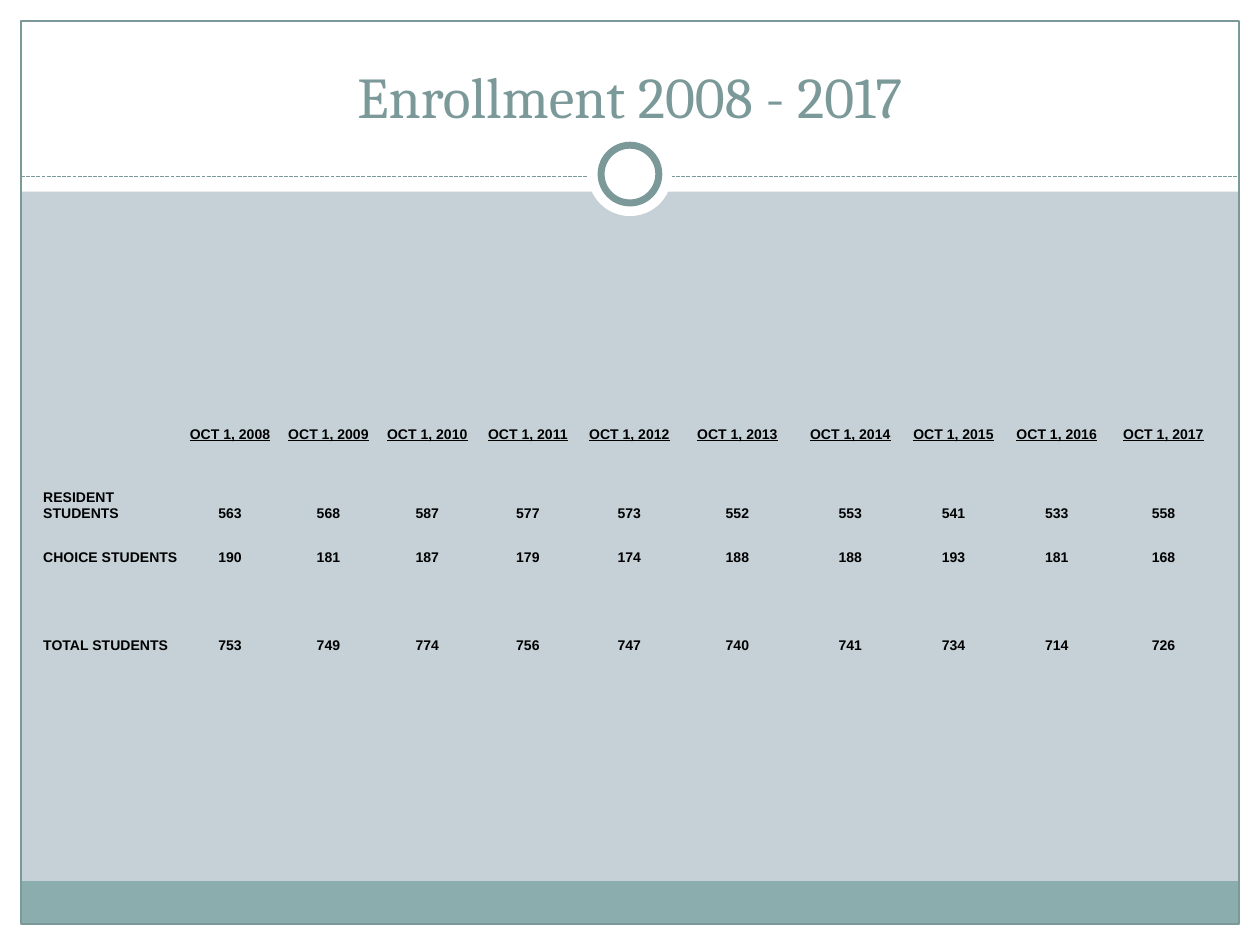
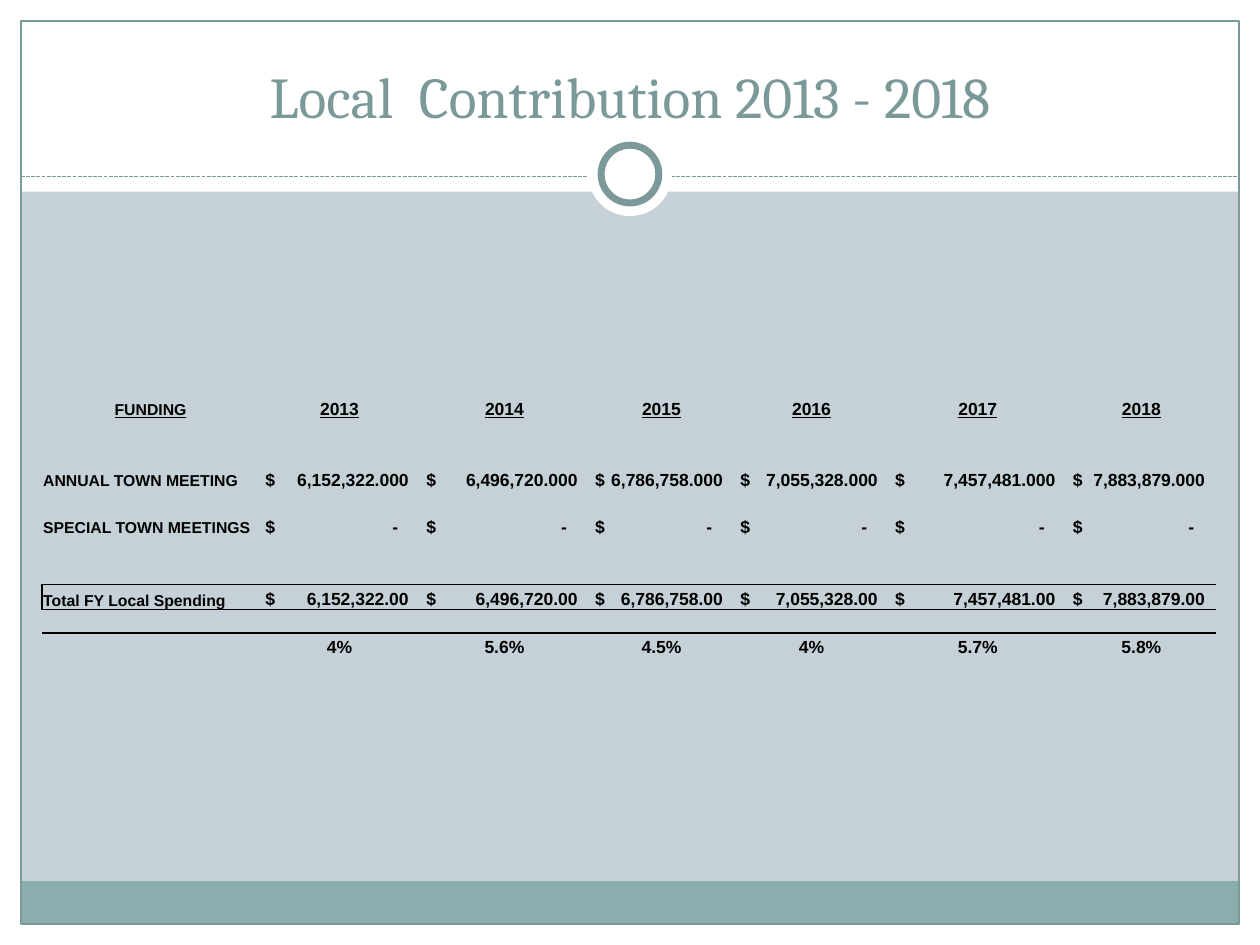
from lxml import etree
from pptx import Presentation
from pptx import util as u
from pptx.dml.color import RGBColor
from pptx.enum import dml, shapes, text
from pptx.oxml import ns

COLORS = {
    "background": "C5D1D7",
    "paper": "FFFFFF",
    "accent": "7C999A",
    "footer": "8CADAE",
    "ink": "000000",
}
WIDTH, HEIGHT, MARGIN = 720, 540, 12
HEADER_HEIGHT = 109.5
NO_STYLE_TABLE = "{2D5ABB26-0587-4C30-8999-92F81FD0307C}"
CELL_INSET, AMOUNT_INSET = 0.7, 3.6
AMOUNT_GAP, DASH_GAP = 6.5, 12.5
CENTER, LEFT = text.PP_ALIGN.CENTER, text.PP_ALIGN.LEFT

ENROLLMENT_COLUMNS = [79, 57, 55.5, 57.5, 57.5, 58.5, 65, 64, 54, 64, 58]
ENROLLMENT_ROWS = [12.6] * 4 + [20.2] + [12.6] * 6
ENROLLMENT = {
    4: ("RESIDENT STUDENTS", [563, 568, 587, 577, 573, 552, 553, 541, 533, 558]),
    6: ("CHOICE STUDENTS", [190, 181, 187, 179, 174, 188, 188, 193, 181, 168]),
    10: ("TOTAL STUDENTS", [753, 749, 774, 756, 747, 740, 741, 734, 714, 726]),
}

FUNDING_COLUMNS = [124, 92, 96.5, 83, 88.5, 101.5, 85.5]
FUNDING_ROWS = [13.5] * 8 + [14.4] + [13.5] * 2
TOTAL_ROW = 8
TOWN_MEETING = [6152322, 6496720, 6786758, 7055328, 7457481, 7883879]
FUNDING = {
    3: ("ANNUAL TOWN MEETING", [f"{amount:,.3f}" for amount in TOWN_MEETING]),
    5: ("SPECIAL TOWN MEETINGS", ["-"] * len(TOWN_MEETING)),
    TOTAL_ROW: ("Total FY Local Spending", [f"{amount:,.2f}" for amount in TOWN_MEETING]),
}
GROWTH = ["4%", "5.6%", "4.5%", "4%", "5.7%", "5.8%"]


def color(name):
    return RGBColor.from_string(COLORS[name])


def points(*lengths):
    return [u.Pt(length) for length in lengths]


def add_run(paragraph, content, font, size, color_name, bold=False, underline=False):
    run = paragraph.add_run()
    run.text = content
    run.font.name = font
    run.font.size = u.Pt(size)
    run.font.color.rgb = color(color_name)
    run.font.bold = bold
    run.font.underline = underline


def add_panel(slide, box, fill=None, line_width=0, kind=shapes.MSO_SHAPE.RECTANGLE):
    shape = slide.shapes.add_shape(kind, *points(*box))
    shape.shadow.inherit = False
    if fill:
        shape.fill.solid()
        shape.fill.fore_color.rgb = color(fill)
    else:
        shape.fill.background()
    if line_width:
        shape.line.color.rgb = color("accent")
        shape.line.width = u.Pt(line_width)
    else:
        shape.line.fill.background()


def add_dashed_rule(slide, y):
    rule = slide.shapes.add_connector(
        shapes.MSO_CONNECTOR.STRAIGHT, *points(MARGIN, y, WIDTH - MARGIN, y))
    rule.line.color.rgb = color("accent")
    rule.line.width = u.Pt(0.75)
    rule.line.dash_style = dml.MSO_LINE.SQUARE_DOT
    etree.SubElement(rule._element.spPr, ns.qn("a:effectLst"))


def add_disc(slide, diameter, line_width=0):
    """Draw a white circle centred on the header's medallion."""
    box = (WIDTH - diameter) / 2, 99.5 - diameter / 2, diameter, diameter
    add_panel(slide, box, "paper", line_width, shapes.MSO_SHAPE.OVAL)


def add_title(slide, title):
    frame = slide.shapes.add_textbox(*points(24, 18, 672, 60)).text_frame
    frame.word_wrap = True
    frame.vertical_anchor = text.MSO_ANCHOR.BOTTOM
    paragraph = frame.paragraphs[0]
    paragraph.alignment = CENTER
    add_run(paragraph, title, "Cambria", 33, "accent")


def add_framed_slide(presentation, title):
    slide = presentation.slides.add_slide(presentation.slide_layouts[6])
    slide.background.fill.solid()
    slide.background.fill.fore_color.rgb = color("background")
    inner_width = WIDTH - 2 * MARGIN
    for box in ((0, HEIGHT - MARGIN, WIDTH, MARGIN), (0, 0, WIDTH, HEADER_HEIGHT),
                (0, 0, MARGIN, HEIGHT), (WIDTH - MARGIN, 0, MARGIN, HEIGHT)):
        add_panel(slide, box, "paper")
    add_panel(slide, (MARGIN, 503.5, inner_width, 24.5), "footer")
    add_panel(slide, (MARGIN, MARGIN, inner_width, HEIGHT - 2 * MARGIN), line_width=0.75)
    add_dashed_rule(slide, 100.8)
    add_disc(slide, 48)
    add_disc(slide, 33, 4)
    add_title(slide, title)
    return slide


def add_plain_table(slide, top, columns, rows):
    """Add an unstyled table whose empty cells do not stretch its rows."""
    table = slide.shapes.add_table(
        len(rows), len(columns), *points(24, top, sum(columns), sum(rows))).table
    table.first_row = table.horz_banding = False
    table._tbl.tblPr.find(ns.qn("a:tableStyleId")).text = NO_STYLE_TABLE
    for column, width in zip(table.columns, columns):
        column.width = u.Pt(width)
    for row, height in zip(table.rows, rows):
        row.height = u.Pt(height)
    for cell in table.iter_cells():
        cell.fill.background()
        cell.vertical_anchor = text.MSO_ANCHOR.BOTTOM
        cell.margin_left = cell.margin_right = cell.margin_top = u.Pt(CELL_INSET)
        cell.margin_bottom = 0
        paragraph = cell.text_frame.paragraphs[0]
        etree.SubElement(paragraph._p, ns.qn("a:endParaRPr"), sz="800")
    return table


def write_cell(cell, content, size, alignment=CENTER, underline=False):
    paragraph = cell.text_frame.paragraphs[0]
    paragraph.alignment = alignment
    add_run(paragraph, str(content), "Arial", size, "ink", True, underline)


def write_amount(cell, amount, column_width):
    """Put the dollar sign at the left and the amount at a right tab stop."""
    cell.margin_left = u.Pt(AMOUNT_INSET)
    gap = DASH_GAP if amount == "-" else AMOUNT_GAP
    write_cell(cell, f"$\t{amount}", 10, LEFT)
    properties = cell.text_frame.paragraphs[0]._p.get_or_add_pPr()
    stops = etree.SubElement(properties, ns.qn("a:tabLst"))
    position = u.Pt(column_width - gap - AMOUNT_INSET)
    etree.SubElement(stops, ns.qn("a:tab"), pos=str(position), algn="r")


def add_borders(cell, sides):
    """Draw black borders; sides are letters in the order L, R, T, B."""
    properties = cell._tc.get_or_add_tcPr()
    for index, side in enumerate(sides):
        line = etree.Element(ns.qn(f"a:ln{side}"), w=str(u.Pt(1)))
        fill = etree.SubElement(line, ns.qn("a:solidFill"))
        etree.SubElement(fill, ns.qn("a:srgbClr"), val=COLORS["ink"])
        properties.insert(index, line)


def add_enrollment_table(slide):
    table = add_plain_table(slide, 227.5, ENROLLMENT_COLUMNS, ENROLLMENT_ROWS)
    for column, year in enumerate(range(2008, 2018), 1):
        write_cell(table.cell(1, column), f"OCT 1, {year}", 8, underline=True)
    for row, (label, counts) in ENROLLMENT.items():
        write_cell(table.cell(row, 0), label, 8, LEFT)
        for column, count in enumerate(counts, 1):
            write_cell(table.cell(row, column), count, 8)


def add_funding_table(slide):
    table = add_plain_table(slide, 226, FUNDING_COLUMNS, FUNDING_ROWS)
    write_cell(table.cell(0, 0), "FUNDING", 9, underline=True)
    for column, year in enumerate(range(2013, 2019), 1):
        write_cell(table.cell(0, column), year, 10, underline=True)
    for row, (label, amounts) in FUNDING.items():
        write_cell(table.cell(row, 0), label, 9, LEFT)
        for column, amount in enumerate(amounts, 1):
            write_amount(table.cell(row, column), amount, FUNDING_COLUMNS[column])
    for column, growth in enumerate(GROWTH, 1):
        write_cell(table.cell(10, column), growth, 10)
    for column in range(len(FUNDING_COLUMNS)):
        add_borders(table.cell(TOTAL_ROW - 1, column), "B")
        add_borders(table.cell(TOTAL_ROW, column), "TB" if column else "LTB")
        add_borders(table.cell(TOTAL_ROW + 1, column), "T")


def main():
    presentation = Presentation()
    presentation.slide_width, presentation.slide_height = points(WIDTH, HEIGHT)
    add_enrollment_table(add_framed_slide(presentation, "Enrollment 2008 - 2017"))
    add_funding_table(add_framed_slide(presentation, "Local  Contribution 2013 - 2018"))
    presentation.save("out.pptx")


if __name__ == "__main__":
    main()
